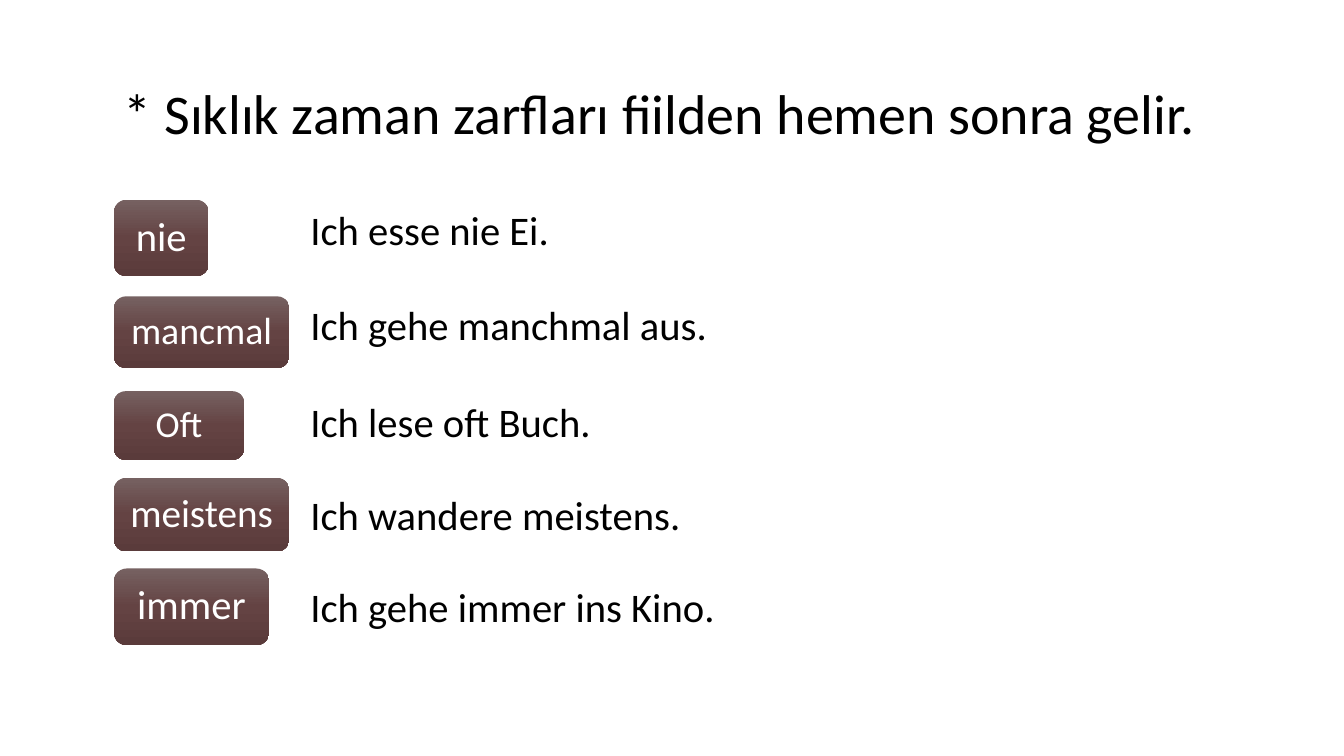
from copy import deepcopy

from pptx import Presentation
from pptx.dml.color import RGBColor
from pptx.enum import shapes, text
from pptx.util import Pt

COLORS = {"text": "000000", "label": "FFFFFF",
          "top": "766161", "middle": "644343", "bottom": "5A3B3B"}
LEFT = 81.4
SENTENCE_LEFT = 214.6

# adverb, its size, (top, width, height) of its box; sentence, its top and width
ROWS = [
    ("nie", 29, (142.6, 67.7, 54.7), "Ich esse nie Ei.", 142.6, 187.2),
    ("mancmal", 27, (211.7, 125.3, 51.1), "Ich gehe manchmal aus.", 211, 301),
    ("Oft", 26, (279.4, 92.9, 49), "Ich lese oft Buch.", 280, 216.7),
    ("meistens", 28, (341.3, 125.3, 52.6), "Ich wandere meistens.", 346.3, 280.8),
    ("immer", 29, (406.1, 110.9, 54.7), "Ich gehe immer ins Kino.", 411.8, 309.6),
]


def write(frame, words, size, color, **paragraph_format):
    paragraph = frame.paragraphs[0]
    for name, value in paragraph_format.items():
        setattr(paragraph, name, value)
    run = paragraph.add_run()
    run.text = words
    for name, value in {"name": "Calibri", "size": Pt(size)}.items():
        setattr(run.font, name, value)
    run.font.color.rgb = RGBColor.from_string(COLORS[color])


def shade(fill):
    """Fill from top to bottom with three evenly spaced colours."""
    fill.gradient()
    fill.gradient_angle = 270
    stops = fill._fill._gradFill.gsLst
    stops.insert(1, deepcopy(stops[0]))
    for stop, color, position in zip(fill.gradient_stops,
                                     ("top", "middle", "bottom"), (0, 0.5, 1)):
        stop.color.rgb = RGBColor.from_string(COLORS[color])
        stop.position = position


def add_adverb(slide, box, adverb, size):
    label = slide.shapes.add_shape(shapes.MSO_SHAPE.ROUNDED_RECTANGLE,
                                   *map(Pt, box))
    label.adjustments[0] = 0.1667
    label.shadow.inherit = False
    label.line.fill.background()
    shade(label.fill)
    frame_format = {"word_wrap": False,
                    "vertical_anchor": text.MSO_ANCHOR.MIDDLE,
                    "margin_left": Pt(11), "margin_right": Pt(11),
                    "margin_top": Pt(11), "margin_bottom": Pt(11)}
    for name, value in frame_format.items():
        setattr(label.text_frame, name, value)
    write(label.text_frame, adverb, size, "label",
          alignment=text.PP_ALIGN.CENTER, line_spacing=0.9)


def add_line(slide, box, words, size):
    frame = slide.shapes.add_textbox(*map(Pt, box)).text_frame
    frame.word_wrap = True
    frame.auto_size = text.MSO_AUTO_SIZE.SHAPE_TO_FIT_TEXT
    write(frame, words, size, "text")


def main():
    deck = Presentation()
    deck.slide_width, deck.slide_height = Pt(960), Pt(540)
    slide = deck.slides.add_slide(deck.slide_layouts[6])
    for adverb, size, (top, width, height), sentence, line_top, line_width in ROWS:
        add_adverb(slide, (LEFT, top, width, height), adverb, size)
        add_line(slide, (SENTENCE_LEFT, line_top, line_width, 42.5), sentence, 29)
    add_line(slide, (LEFT, 52.6, 836.6, 55.4),
             "* Sıklık zaman zarfları fiilden hemen sonra gelir.", 40)
    deck.save("out.pptx")


if __name__ == "__main__":
    main()
